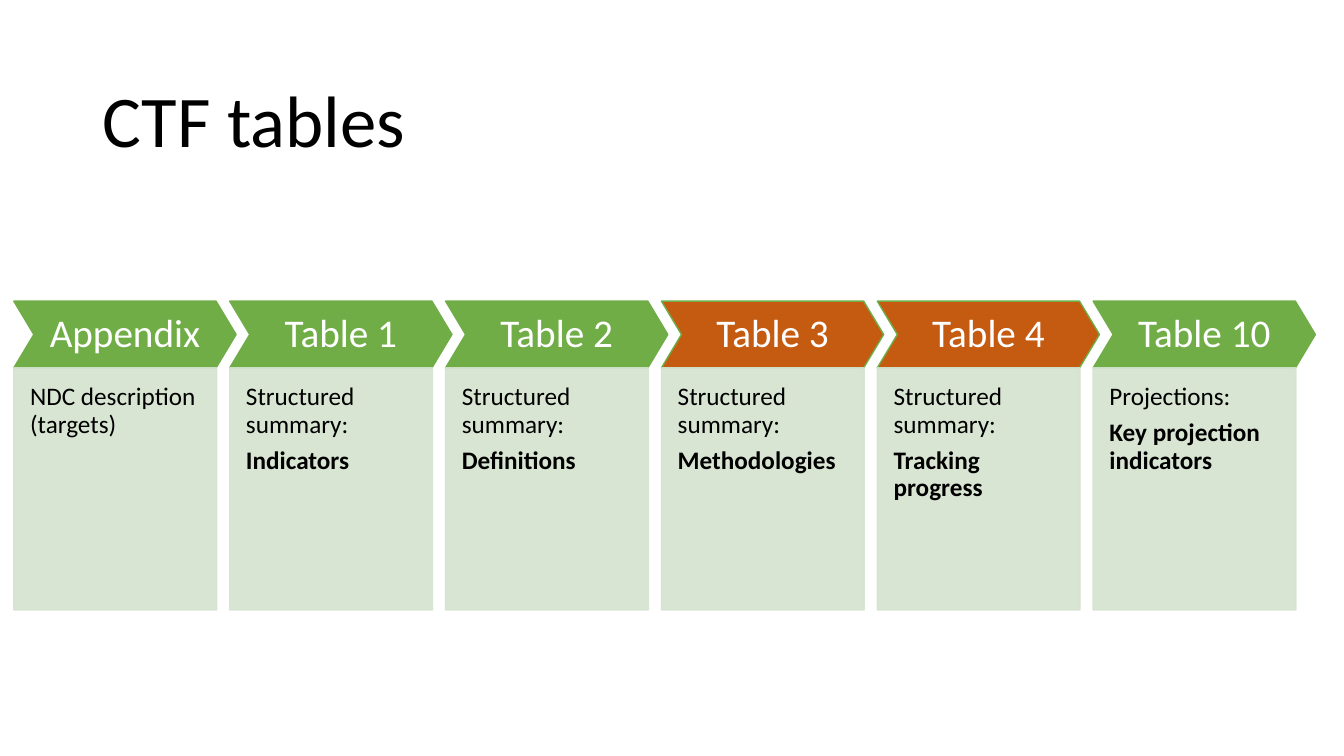
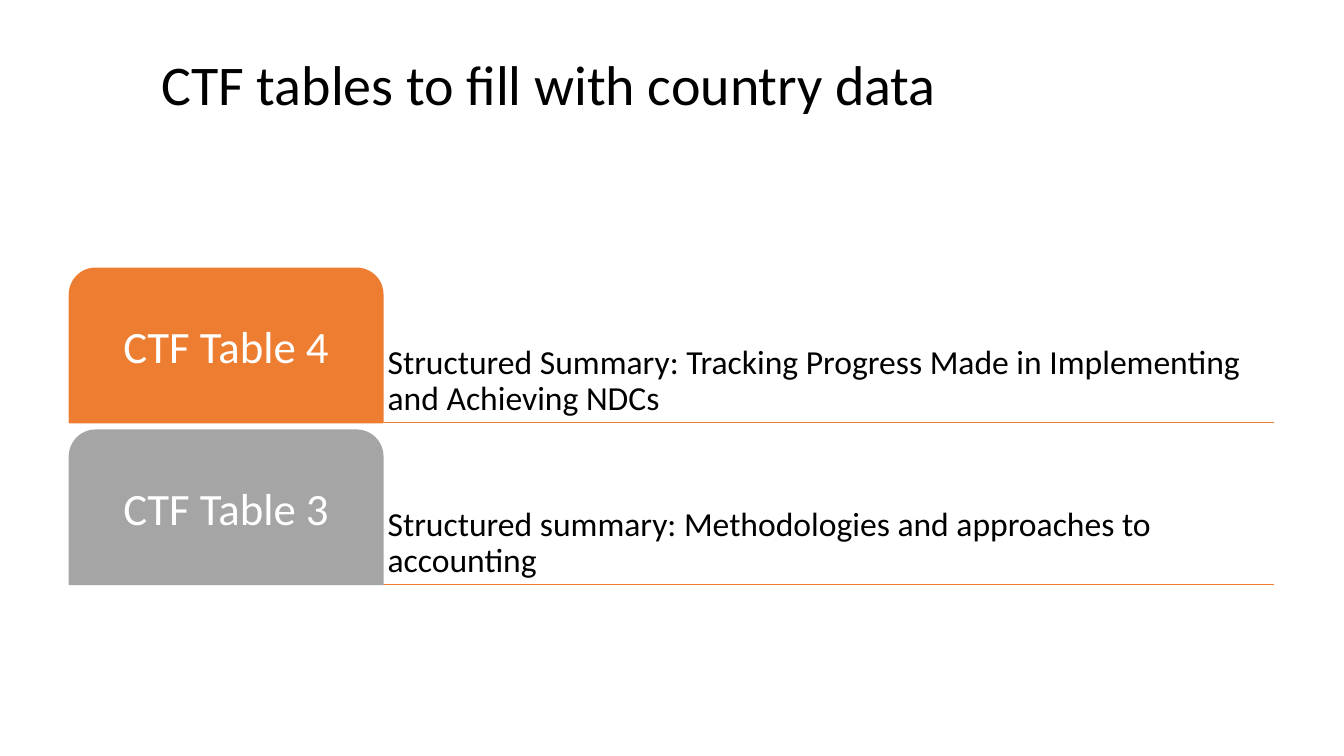
from dataclasses import dataclass

from lxml import etree
from pptx import Presentation
from pptx.dml.color import RGBColor
from pptx.enum.shapes import MSO_CONNECTOR, MSO_SHAPE
from pptx.enum.text import MSO_ANCHOR, MSO_AUTO_SIZE, PP_ALIGN
from pptx.oxml.ns import qn
from pptx.util import Cm, Pt

CHEVRON = MSO_SHAPE.CHEVRON
RECTANGLE = MSO_SHAPE.RECTANGLE
ROUND_TOP = MSO_SHAPE.ROUND_2_SAME_RECTANGLE
STRAIGHT = MSO_CONNECTOR.STRAIGHT
TOP, MIDDLE, BOTTOM = MSO_ANCHOR.TOP, MSO_ANCHOR.MIDDLE, MSO_ANCHOR.BOTTOM
LEFT, CENTER = PP_ALIGN.LEFT, PP_ALIGN.CENTER
NO_AUTOFIT = MSO_AUTO_SIZE.NONE
TITLE_ONLY = 5


@dataclass(frozen=True)
class Theme:
    font: str = "Calibri"
    text: str = "000000"
    inverse: str = "FFFFFF"
    green: str = "70AD47"
    pale_green: str = "D5E3CF"
    rust: str = "C55A11"
    orange: str = "ED7D31"
    grey: str = "A5A5A5"
    title_size: int = 52
    long_title_size: int = 40
    tab_size: int = 32
    step_size: int = 28
    summary_size: int = 24
    detail_size: int = 18
    line_width: int = 1
    line_spacing: float = 0.9
    space_after: float = 0.35  # share of the type size


THEME = Theme()

STEPS = [
    ("Appendix", THEME.green, ["NDC description (targets)"]),
    ("Table 1", THEME.green, ["Structured summary:", "Indicators"]),
    ("Table 2", THEME.green, ["Structured summary:", "Definitions"]),
    ("Table 3", THEME.rust, ["Structured summary:", "Methodologies"]),
    ("Table 4", THEME.rust, ["Structured summary:", "Tracking progress"]),
    ("Table 10", THEME.green, ["Projections:", "Key projection indicators"]),
]

TABS = [
    ("CTF Table 4", THEME.orange,
     "Structured Summary: Tracking Progress Made in Implementing and Achieving NDCs"),
    ("CTF Table 3", THEME.grey,
     "Structured summary: Methodologies and approaches to accounting"),
]


def box(left, top, width, height):
    return Cm(left), Cm(top), Cm(width), Cm(height)


def write(frame, paragraphs, size, color=THEME.text, align=LEFT, anchor=TOP,
          insets=None, space_after=THEME.space_after):
    """Fill a text frame; every paragraph after the first is bold."""
    frame.word_wrap = True
    frame.auto_size = NO_AUTOFIT
    frame.vertical_anchor = anchor
    if insets:
        (frame.margin_left, frame.margin_top,
         frame.margin_right, frame.margin_bottom) = map(Cm, insets)
    for index, words in enumerate(paragraphs):
        paragraph = frame.add_paragraph() if index else frame.paragraphs[0]
        paragraph.alignment = align
        paragraph.line_spacing = THEME.line_spacing
        paragraph.space_after = Pt(size * space_after)
        run = paragraph.add_run()
        run.text = words
        run.font.name = THEME.font
        run.font.size = Pt(size)
        run.font.bold = index > 0
        run.font.color.rgb = RGBColor.from_string(color)


def add_titled_slide(deck, title, size, area):
    slide = deck.slides.add_slide(deck.slide_layouts[TITLE_ONLY])
    heading = slide.shapes.title
    heading.left, heading.top, heading.width, heading.height = area
    write(heading.text_frame, [title], size, anchor=MIDDLE, space_after=0)
    return slide


def add_panel(slide, preset, area, fill, outline=None, adjustments=()):
    panel = slide.shapes.add_shape(preset, *area)
    panel.shadow.inherit = False
    for index, value in enumerate(adjustments):
        panel.adjustments[index] = value
    panel.fill.solid()
    panel.fill.fore_color.rgb = RGBColor.from_string(fill)
    panel.line.color.rgb = RGBColor.from_string(outline or fill)
    panel.line.width = Pt(THEME.line_width)
    return panel


def set_opacity(panel, percent):
    """Apply one opacity to both the fill and the outline."""
    for color in panel.element.spPr.iter(qn("a:srgbClr")):
        etree.SubElement(color, qn("a:alpha")).set("val", str(percent * 1000))


def add_rule(slide, start, end, y):
    rule = slide.shapes.add_connector(STRAIGHT, Cm(start), Cm(y), Cm(end), Cm(y))
    rule.line.color.rgb = RGBColor.from_string(THEME.orange)
    rule.line.width = Pt(THEME.line_width)
    etree.SubElement(rule.element.spPr, qn("a:effectLst"))


def add_step(slide, left, name, color, details):
    """Add a chevron with its detail panel below."""
    top, height = 7.59, 1.68
    chevron = add_panel(slide, CHEVRON, box(left, top, 5.6, height), color,
                        outline=THEME.green, adjustments=[0.3])
    write(chevron.text_frame, [name], THEME.step_size, THEME.inverse,
          CENTER, MIDDLE, [0.2] * 4)
    detail = add_panel(slide, RECTANGLE, box(left, top + height, 5.11, 6.1),
                       THEME.pale_green)
    set_opacity(detail, 90)
    write(detail.text_frame, details, THEME.detail_size,
          insets=[0.41, 0.41, 0.41, 0.81])


def add_tab(slide, top, name, color, summary):
    """Add a rule with a tab and its summary standing on it."""
    left, tab_width, summary_width, height = 1.75, 7.9, 22.45, 3.89
    summary_left = left + tab_width
    add_rule(slide, left, summary_left + summary_width, top + height)
    summary_box = slide.shapes.add_textbox(
        *box(summary_left, top, summary_width, height))
    write(summary_box.text_frame, [summary], THEME.summary_size,
          anchor=BOTTOM, insets=[0.12] * 4)
    tab = add_panel(slide, ROUND_TOP, box(left, top, tab_width, height), color,
                    adjustments=[0.17, 0])
    write(tab.text_frame, [name], THEME.tab_size, THEME.inverse,
          CENTER, MIDDLE, [0.17] * 4)


def main():
    deck = Presentation()
    deck.slide_width, deck.slide_height = Cm(33.87), Cm(19.05)

    overview = add_titled_slide(deck, "CTF tables", THEME.title_size,
                                box(2.34, 1.55, 29.21, 3.15))
    for index, step in enumerate(STEPS):
        add_step(overview, 0.35 + index * 5.44, *step)

    to_fill = add_titled_slide(deck, "CTF tables to fill with country data",
                               THEME.long_title_size,
                               box(3.81, 0.97, 27.89, 2.44))
    for index, tab in enumerate(TABS):
        add_tab(to_fill, 6.76 + index * 4.08, *tab)

    deck.save("out.pptx")


if __name__ == "__main__":
    main()
